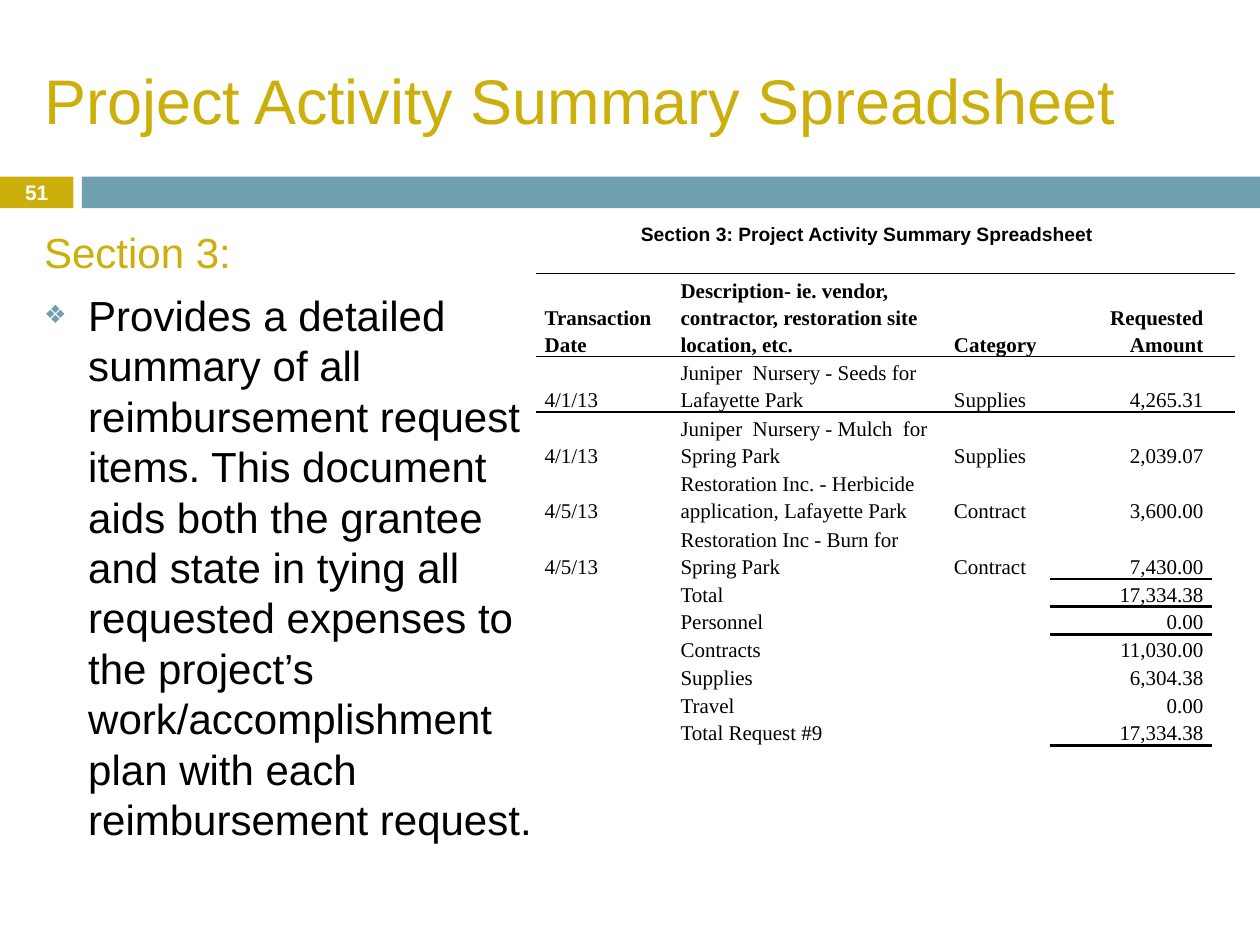
from lxml import etree
from pptx import Presentation
from pptx.dml.color import RGBColor
from pptx.enum.shapes import MSO_SHAPE
from pptx.enum.text import MSO_ANCHOR, PP_ALIGN
from pptx.oxml.ns import qn
from pptx.util import Cm, Pt

RECT = MSO_SHAPE.RECTANGLE
TOP, MIDDLE, BOTTOM = MSO_ANCHOR.TOP, MSO_ANCHOR.MIDDLE, MSO_ANCHOR.BOTTOM
LEFT, CENTER, RIGHT = PP_ALIGN.LEFT, PP_ALIGN.CENTER, PP_ALIGN.RIGHT

GOLD, BLUE, BLACK, WHITE = "CCAF0A", "6EA0B0", "000000", "FFFFFF"
SANS, SERIF = "Arial", "Times New Roman"
NO_STYLE = "{2D5ABB26-0587-4C30-8999-92F81FD0307C}"

COL_WIDTHS = [2.74, 5.51, 2.11, 3.28, 0.46]
LINE_HEIGHT = 0.56
AMOUNT_COL = 3
# Number of text lines in the row, then its cells
ROWS = [
    (3, "Transaction Date",
     "Description- ie. vendor, contractor, restoration site location, etc.",
     "Category", "Requested Amount"),
    (2, "4/1/13", "Juniper  Nursery - Seeds for Lafayette Park", "Supplies", "4,265.31"),
    (2, "4/1/13", "Juniper  Nursery - Mulch  for Spring Park", "Supplies", "2,039.07"),
    (2, "4/5/13", "Restoration Inc. - Herbicide application, Lafayette Park",
     "Contract", "3,600.00"),
    (2, "4/5/13", "Restoration Inc - Burn for Spring Park", "Contract", "7,430.00"),
    (1, "", "Total", "", "17,334.38"),
    (1, "", "Personnel", "", "0.00"),
    (1, "", "Contracts", "", "11,030.00"),
    (1, "", "Supplies", "", "6,304.38"),
    (1, "", "Travel", "", "0.00"),
    (1, "", "Total Request #9", "", "17,334.38"),
]
# Rule widths under the amounts, by row
AMOUNT_RULES = {4: 1, 5: 2.25, 10: 2.25}


def color(value):
    return RGBColor.from_string(value)


def write(p, text, size=12, font=SANS, fill=BLACK, bold=False, align=LEFT,
          spacing=None, before=None):
    p.alignment = align
    if spacing:
        p.line_spacing = spacing
    if before:
        p.space_before = Pt(before)
    if not text:
        p._p.get_or_add_endParaRPr().set("sz", str(size * 100))
        return
    r = p.add_run()
    r.text = text
    r.font.size = Pt(size)
    r.font.name = font
    r.font.bold = bold
    r.font.color.rgb = color(fill)


def add_text(s, left, top, width, height, anchor=TOP):
    sp = s.shapes.add_textbox(Cm(left), Cm(top), Cm(width), Cm(height))
    tf = sp.text_frame
    tf.word_wrap = True
    tf.vertical_anchor = anchor
    return tf


def add_bar(s, left, top, width, height, fill):
    sp = s.shapes.add_shape(RECT, Cm(left), Cm(top), Cm(width), Cm(height))
    sp.shadow.inherit = False
    sp.fill.solid()
    sp.fill.fore_color.rgb = color(fill)
    sp.line.fill.background()


def add_bullet(p, char, fill, percent, indent):
    pPr = p._p.get_or_add_pPr()
    pPr.set("marL", str(Cm(indent)))
    pPr.set("indent", str(-Cm(indent)))
    clr = etree.SubElement(pPr, qn("a:buClr"))
    etree.SubElement(clr, qn("a:srgbClr"), val=fill)
    etree.SubElement(pPr, qn("a:buSzPct"), val=str(percent * 1000))
    etree.SubElement(pPr, qn("a:buFont"), typeface=SANS)
    etree.SubElement(pPr, qn("a:buChar"), char=char)


def add_border(cell, side, width):
    ln = etree.SubElement(cell._tc.get_or_add_tcPr(), qn("a:" + side), w=str(Pt(width)))
    fill = etree.SubElement(ln, qn("a:solidFill"))
    etree.SubElement(fill, qn("a:srgbClr"), val=BLACK)


def rule_below(row, col):
    """Width of the rule under a cell; row -1 is the table's top edge."""
    if row in (-1, 0):
        return 1
    return AMOUNT_RULES.get(row) if col == AMOUNT_COL else None


def add_summary_table(s, left, top):
    height = LINE_HEIGHT * sum(row[0] for row in ROWS)
    frame = s.shapes.add_table(len(ROWS), len(COL_WIDTHS), Cm(left), Cm(top),
                               Cm(sum(COL_WIDTHS)), Cm(height))
    table = frame.table
    table.first_row = table.horz_banding = False
    table._tbl.tblPr.find(qn("a:tableStyleId")).text = NO_STYLE
    for col, width in enumerate(COL_WIDTHS):
        table.columns[col].width = Cm(width)
    for row, (lines, *texts) in enumerate(ROWS):
        table.rows[row].height = Cm(lines * LINE_HEIGHT)
        for col, text in enumerate(texts + [""]):
            cell = table.cell(row, col)
            cell.margin_left = cell.margin_right = Cm(0.18)
            cell.margin_top = cell.margin_bottom = 0
            cell.vertical_anchor = BOTTOM
            for side, edge in (("lnT", row - 1), ("lnB", row)):
                width = rule_below(edge, col)
                if width:
                    add_border(cell, side, width)
            cell.fill.background()
            write(cell.text_frame.paragraphs[0], text, font=SERIF, bold=row == 0,
                  align=RIGHT if col == AMOUNT_COL else LEFT, spacing=1.15)


def main():
    prs = Presentation()
    prs.slide_width, prs.slide_height = Cm(25.4), Cm(19.05)
    s = prs.slides.add_slide(prs.slide_layouts[6])

    # Band under the title
    add_bar(s, 0, 3.56, 1.48, 0.64, GOLD)
    add_bar(s, 1.65, 3.56, 23.75, 0.64, BLUE)

    # Expense table and its heading
    add_summary_table(s, 10.8, 5.51)
    tf = add_text(s, 12.67, 4.34, 9.96, 0.74, MIDDLE)
    write(tf.paragraphs[0], "Section 3: Project Activity Summary Spreadsheet",
          size=11, bold=True)

    # Explanation
    tf = add_text(s, 0.64, 4.45, 10.36, 13.97)
    write(tf.paragraphs[0], "Section 3:", size=24, fill=GOLD, before=7)
    p = tf.add_paragraph()
    write(p, "Provides a detailed summary of all reimbursement request items. "
             "This document aids both the grantee and state in tying all requested "
             "expenses to the project’s work/accomplishment plan with each "
             "reimbursement request.", size=24, before=7)
    add_bullet(p, "❖", BLUE, 60, 0.89)

    # Title and slide number
    tf = add_text(s, 0.64, 0.64, 23.72, 2.74, MIDDLE)
    write(tf.paragraphs[0], "Project Activity Summary Spreadsheet", size=36, fill=GOLD)
    tf = add_text(s, 0, 3.53, 1.48, 0.69, MIDDLE)
    write(tf.paragraphs[0], "51", fill=WHITE, bold=True, align=CENTER)

    prs.save("out.pptx")


if __name__ == "__main__":
    main()
